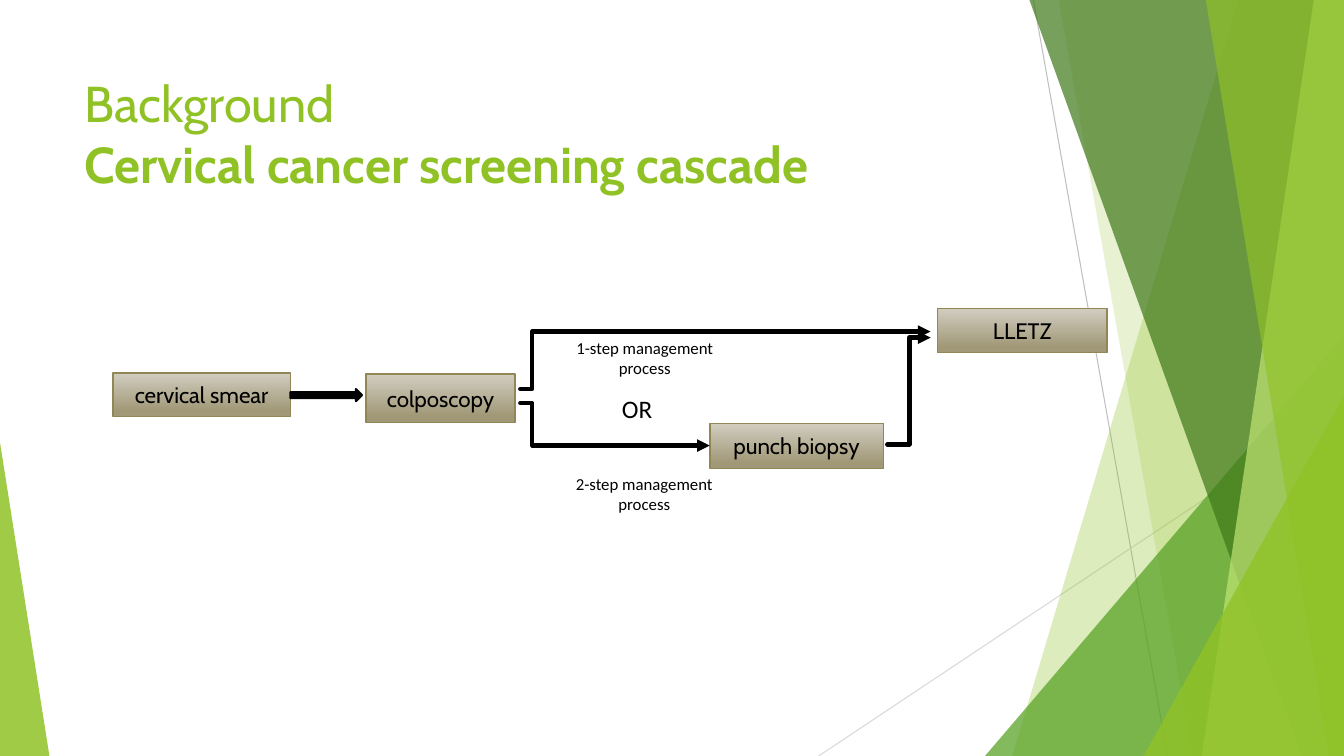
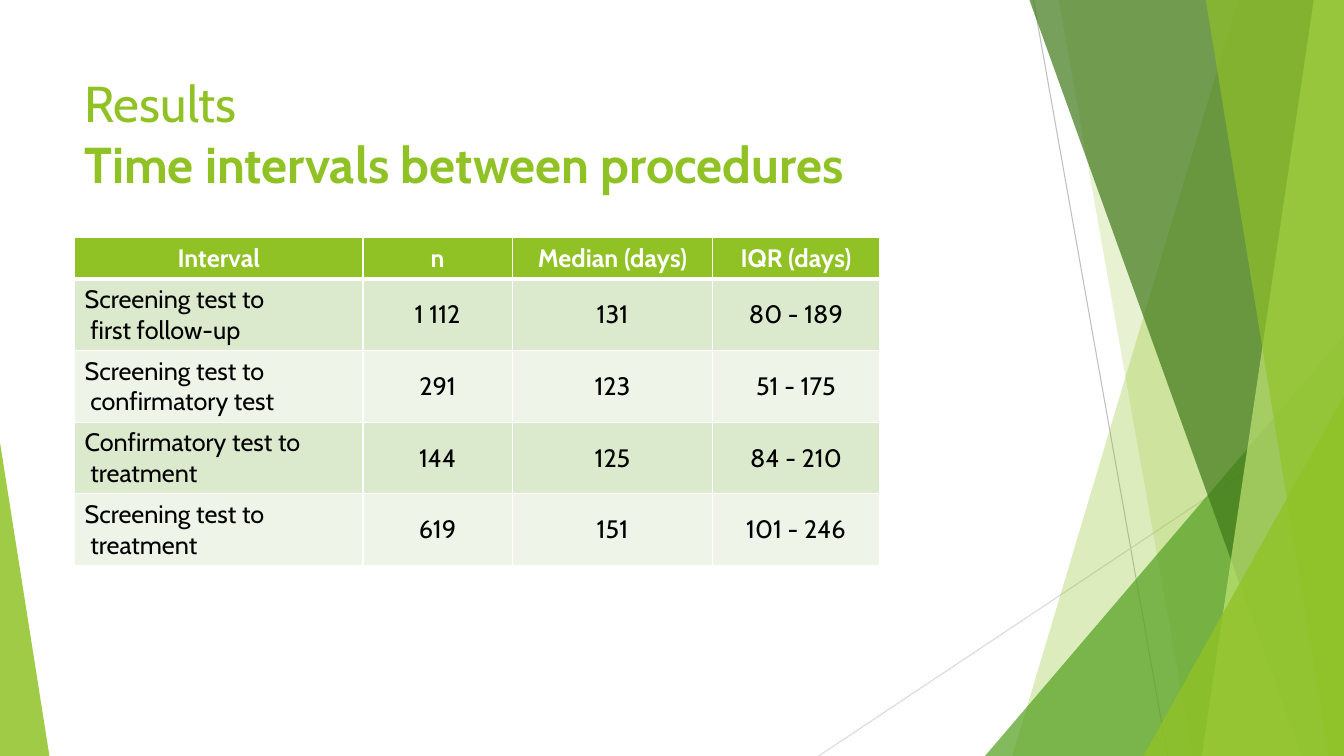
from lxml import etree
from pptx import Presentation
from pptx.dml.color import RGBColor
from pptx.enum.shapes import MSO_CONNECTOR as CONNECTOR, MSO_SHAPE as SHAPE
from pptx.enum.text import MSO_ANCHOR as ANCHOR, PP_ALIGN as ALIGN
from pptx.oxml.ns import qn
from pptx.util import Inches, Pt

WIDTH, HEIGHT = 13.33, 7.5
GREEN = "90C226"
MID_GREEN = "54A021"
DARK_GREEN = "3F7819"
PALE_GREEN = "C0E474"
BLACK, WHITE = "000000", "FFFFFF"
BAND_FILLS = ("DBE9CD", "EEF4E8")
BOX_TOP, BOX_BOTTOM, BOX_LINE = "D1CDC0", "A19877", "918655"
TITLE_FONT = BODY_FONT = "Cabin"
LABEL_FONT = "Calibri"


def rgb(color):
    return RGBColor.from_string(color)


def inches(*values):
    return [Inches(value) for value in values]


def add_child(parent, tag, **attributes):
    return etree.SubElement(parent, qn(tag), attributes)


def format_text(text_frame, size, color, font=BODY_FONT, align=ALIGN.LEFT, bold=False):
    for paragraph in text_frame.paragraphs:
        paragraph.alignment = align
        for run in paragraph.runs:
            run.font.name = font
            run.font.size = Pt(size)
            run.font.color.rgb = rgb(color)
            run.font.bold = bold


def add_text(slide, box, text, size, color, font, align=ALIGN.LEFT, anchor=ANCHOR.MIDDLE):
    text_frame = slide.shapes.add_textbox(*inches(*box)).text_frame
    text_frame.word_wrap = True
    text_frame.vertical_anchor = anchor
    text_frame.text = text
    format_text(text_frame, size, color, font, align)
    return text_frame


def fill_facet(shape, color, opacity):
    """Give a decorative facet a translucent fill and no outline."""
    shape.shadow.inherit = False
    shape.fill.solid()
    shape.fill.fore_color.rgb = rgb(color)
    shape.line.fill.background()
    color_element = shape.element.spPr.find(qn("a:solidFill"))[0]
    add_child(color_element, "a:alpha", val=str(opacity * 1000))


def add_edge_facet(slide, top_x, bottom_x, color, opacity):
    """Fill from a slanted left side to the right edge of the slide."""
    builder = slide.shapes.build_freeform(*inches(top_x, 0), scale=1.0)
    corners = [(WIDTH, 0), (WIDTH, HEIGHT), (bottom_x, HEIGHT)]
    builder.add_line_segments([inches(*corner) for corner in corners], close=True)
    fill_facet(builder.convert_to_shape(), color, opacity)


def add_corner_facet(slide, left, top, width, apex, color, opacity):
    """Add a triangle that stands on the bottom edge of the slide."""
    box = inches(left, top, width, HEIGHT - top)
    triangle = slide.shapes.add_shape(SHAPE.ISOSCELES_TRIANGLE, *box)
    triangle.adjustments[0] = apex
    fill_facet(triangle, color, opacity)


def add_line(slide, kind, start, end, color, width):
    connector = slide.shapes.add_connector(kind, *inches(*start, *end))
    connector.line.color.rgb = rgb(color)
    connector.line.width = Pt(width)
    add_child(connector._element.spPr, "a:effectLst")
    return connector


def add_backdrop(slide):
    add_line(slide, CONNECTOR.STRAIGHT, (10.25, 0), (11.58, HEIGHT), "BFBFBF", 0.75)
    add_line(slide, CONNECTOR.STRAIGHT, (WIDTH, 4.03), (8.12, HEIGHT), "D9D9D9", 0.75)
    add_edge_facet(slide, 12.28, 10.04, GREEN, 30)
    add_edge_facet(slide, 10.5, 11.83, GREEN, 20)
    add_corner_facet(slide, 9.77, 3.33, 3.56, 1, MID_GREEN, 72)
    add_edge_facet(slide, 10.21, 12.91, DARK_GREEN, 70)
    add_edge_facet(slide, 13.03, 11.92, PALE_GREEN, 70)
    add_edge_facet(slide, 11.96, 13.18, GREEN, 65)
    add_corner_facet(slide, 11.34, 3.93, 1.99, 1, GREEN, 80)
    add_corner_facet(slide, 0, 4.39, 0.49, 0, GREEN, 85)


def add_titled_slide(presentation, section, heading):
    slide = presentation.slides.add_slide(presentation.slide_layouts[6])
    add_backdrop(slide)
    title = add_text(slide, (0.74, 0.67, 9.4, 1.44), f"{section}\v{heading}",
                     36, GREEN, TITLE_FONT, anchor=ANCHOR.TOP)
    title.paragraphs[0].runs[-1].font.bold = True
    return slide


def add_step_box(slide, box, text):
    shape = slide.shapes.add_shape(SHAPE.RECTANGLE, *inches(*box))
    shape.shadow.inherit = False
    shape.fill.gradient()
    shape.fill.gradient_angle = 270
    stops = zip(shape.fill.gradient_stops, (0, 0.88), (BOX_TOP, BOX_BOTTOM))
    for stop, position, color in stops:
        stop.position = position
        stop.color.rgb = rgb(color)
    shape.line.color.rgb = rgb(BOX_LINE)
    shape.line.width = Pt(1)
    shape.text_frame.text = text
    shape.text_frame.vertical_anchor = ANCHOR.MIDDLE
    format_text(shape.text_frame, 16, BLACK, align=ALIGN.CENTER)


def add_block_arrow(slide, box):
    arrow = slide.shapes.add_shape(SHAPE.RIGHT_ARROW, *inches(*box))
    arrow.shadow.inherit = False
    arrow.fill.solid()
    arrow.fill.fore_color.rgb = rgb(BLACK)
    arrow.line.color.rgb = rgb(BLACK)
    arrow.line.width = Pt(1.5)


def add_elbow_arrow(slide, start, end, bend_x):
    """Draw an arrow whose vertical part stands at bend_x."""
    connector = add_line(slide, CONNECTOR.ELBOW, start, end, BLACK, 3)
    bend = round((bend_x - start[0]) / (end[0] - start[0]) * 100000)
    guides = connector._element.spPr.find(qn("a:prstGeom")).find(qn("a:avLst"))
    add_child(guides, "a:gd", name="adj1", fmla=f"val {bend}")
    line = connector.line._get_or_add_ln()
    line.set("cap", "rnd")
    add_child(line, "a:round")
    add_child(line, "a:tailEnd", type="triangle")


def set_borders(cell, bottom_width):
    properties = cell._tc.get_or_add_tcPr()
    widths = {"a:lnL": 1, "a:lnR": 1, "a:lnT": 1, "a:lnB": bottom_width}
    for tag, width in widths.items():
        border = add_child(properties, tag, w=str(Pt(width)))
        add_child(add_child(border, "a:solidFill"), "a:srgbClr", val=WHITE)


def add_table(slide, left, top, column_widths, rows):
    """Add a table whose first row is the header."""
    heights = [0.41] + [0.71] * (len(rows) - 1)
    box = inches(left, top, sum(column_widths), sum(heights))
    table = slide.shapes.add_table(len(rows), len(column_widths), *box).table
    table.horz_banding = False
    for column, width in zip(table.columns, column_widths):
        column.width = Inches(width)
    for row_index, values in enumerate(rows):
        table.rows[row_index].height = Inches(heights[row_index])
        header = row_index == 0
        fill = GREEN if header else BAND_FILLS[(row_index - 1) % 2]
        for column_index, value in enumerate(values):
            cell = table.cell(row_index, column_index)
            set_borders(cell, 3 if header or row_index == 0 else 1)
            cell.fill.solid()
            cell.fill.fore_color.rgb = rgb(fill)
            cell.vertical_anchor = ANCHOR.MIDDLE
            cell.text_frame.text = value
            centred = header or column_index > 0
            format_text(cell.text_frame, 18, WHITE if header else BLACK,
                        align=ALIGN.CENTER if centred else ALIGN.LEFT, bold=header)


def build_cascade_slide(presentation):
    slide = add_titled_slide(presentation, "Background", "Cervical cancer screening cascade")
    add_step_box(slide, (1.12, 3.7, 1.76, 0.43), "cervical smear")
    add_step_box(slide, (7.04, 4.2, 1.72, 0.45), "punch biopsy")
    add_step_box(slide, (9.3, 3.06, 1.68, 0.44), "LLETZ")
    add_block_arrow(slide, (2.88, 3.86, 0.71, 0.12))
    add_step_box(slide, (3.63, 3.71, 1.48, 0.48), "colposcopy")
    add_text(slide, (6.07, 3.77, 0.73, 0.56), "OR", 18, BLACK, LABEL_FONT)
    add_text(slide, (5.39, 3.35, 2.01, 0.4), "1-step management process",
             12, BLACK, LABEL_FONT, ALIGN.CENTER)
    add_text(slide, (5.48, 4.67, 1.82, 0.45), "2-step management process",
             12, BLACK, LABEL_FONT, ALIGN.CENTER)
    add_elbow_arrow(slide, (5.16, 3.86), (9.23, 3.29), 5.28)
    add_elbow_arrow(slide, (8.8, 4.41), (9.23, 3.35), 9.02)
    add_elbow_arrow(slide, (5.16, 4), (7.04, 4.42), 5.28)


def build_intervals_slide(presentation):
    slide = add_titled_slide(presentation, "Results", "Time intervals between procedures")
    add_table(slide, 0.74, 2.36, (2.86, 1.48, 1.99, 1.65), [
        ("Interval", "n", "Median (days)", "IQR (days)"),
        ("Screening test to\n first follow-up", "1 112", "131", "80 - 189"),
        ("Screening test to\n confirmatory test", "291", "123", "51 - 175"),
        ("Confirmatory test to\n treatment", "144", "125", "84 - 210"),
        ("Screening test to\n treatment", "619", "151", "101 - 246"),
    ])


def main():
    presentation = Presentation()
    presentation.slide_width, presentation.slide_height = inches(WIDTH, HEIGHT)
    build_cascade_slide(presentation)
    build_intervals_slide(presentation)
    presentation.save("out.pptx")


if __name__ == "__main__":
    main()
